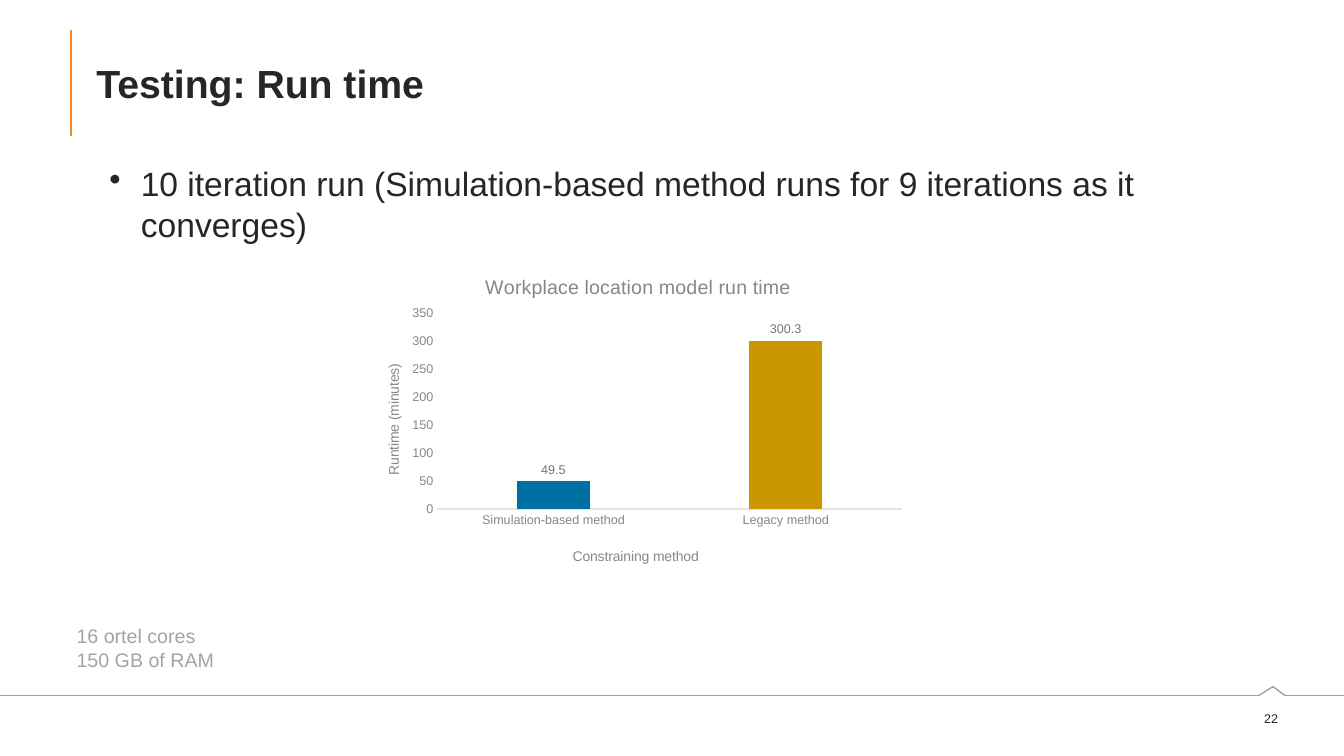
from itertools import pairwise

from lxml.etree import SubElement
from pptx import Presentation
from pptx.chart.data import CategoryChartData
from pptx.dml.color import RGBColor
from pptx.enum.chart import XL_CHART_TYPE as ChartType
from pptx.enum.chart import XL_LABEL_POSITION as LabelPosition
from pptx.enum.chart import XL_TICK_MARK as TickMark
from pptx.enum.shapes import MSO_CONNECTOR as Connector
from pptx.enum.text import MSO_ANCHOR as Anchor
from pptx.enum.text import PP_ALIGN as Align
from pptx.oxml import parse_xml
from pptx.oxml.ns import nsdecls, qn
from pptx.util import Cm, Pt

FONT = "Arial"
INK = RGBColor(0x26, 0x26, 0x26)
ORANGE = RGBColor(0xF6, 0x8B, 0x1F)
GRAY = RGBColor(0xA3, 0xA3, 0xA5)
AXIS_TEXT = RGBColor(0x87, 0x87, 0x8A)
LABEL_TEXT = RGBColor(0x75, 0x75, 0x78)
AXIS_LINE = RGBColor(0xE3, 0xE3, 0xE4)
BLUE = RGBColor(0x00, 0x6F, 0xA1)
GOLD = RGBColor(0xCA, 0x97, 0x00)


def style_font(font, size, color, bold=False):
    font.name = FONT
    font.size = Pt(size)
    font.color.rgb = color
    font.bold = bold


def add_line(slide, start, end, color, width):
    line = slide.shapes.add_connector(
        Connector.STRAIGHT, *(Cm(value) for value in (*start, *end)))
    line.line.color.rgb = color
    line.line.width = Pt(width)
    SubElement(line._element.spPr, qn("a:effectLst"))


def add_text(slide, box, lines, size, color, bold=False, anchor=Anchor.TOP):
    shape = slide.shapes.add_textbox(*(Cm(value) for value in box))
    frame = shape.text_frame
    frame.word_wrap = True
    frame.vertical_anchor = anchor
    frame.text = "\n".join(lines)
    for paragraph in frame.paragraphs:
        style_font(paragraph.font, size, color, bold)
    return frame


def add_bullet(paragraph, margin, hanging):
    properties = paragraph._p.get_or_add_pPr()
    properties.set("marL", str(Cm(margin)))
    properties.set("indent", str(-Cm(hanging)))
    bullet = parse_xml(f'<a:buChar {nsdecls("a")} char="•"/>')
    properties.insert_element_before(bullet, "a:tabLst", "a:defRPr", "a:extLst")


def make_layout(inner=False, **place):
    target = '<c:layoutTarget val="inner"/>' if inner else ""
    modes = "".join(f'<c:{key}Mode val="edge"/>' for key in "xy")
    values = "".join(f'<c:{key} val="{value}"/>' for key, value in place.items())
    return parse_xml(f'<c:layout {nsdecls("c")}><c:manualLayout>'
                     f'{target}{modes}{values}</c:manualLayout></c:layout>')


def set_layout(element, index, layout):
    for old in element.findall(qn("c:layout")):
        element.remove(old)
    element.insert(index, layout)


def set_title(owner, text, size):
    owner.has_text_frame = True
    owner.text_frame.text = text
    style_font(owner.text_frame.paragraphs[0].font, size, AXIS_TEXT)


def style_axis(axis, title):
    axis.has_major_gridlines = False
    axis.major_tick_mark = axis.minor_tick_mark = TickMark.NONE
    style_font(axis.tick_labels.font, 9, AXIS_TEXT)
    set_title(axis.axis_title, title, 10)


def add_run_time_chart(slide, box):
    data = CategoryChartData()
    data.categories = ["Simulation-based method", "Legacy method"]
    data.add_series("Series 1", [49.5, 300.3])
    chart = slide.shapes.add_chart(
        ChartType.COLUMN_CLUSTERED, *(Cm(value) for value in box), data).chart
    chart.has_legend = False
    chart.font.name = FONT
    chart.font.size = Pt(10)
    set_title(chart.chart_title, "Workplace location model run time", 14)

    style_axis(chart.category_axis, "Constraining method")
    chart.category_axis.format.line.color.rgb = AXIS_LINE
    chart.category_axis.format.line.width = Pt(0.75)
    value_axis = chart.value_axis
    style_axis(value_axis, "Runtime (minutes)")
    value_axis.format.line.fill.background()
    value_axis.minimum_scale, value_axis.maximum_scale = 0, 350
    value_axis.major_unit = 50

    plot = chart.plots[0]
    plot.vary_by_categories = False
    plot.gap_width, plot.overlap = 219, -27
    series = plot.series[0]
    for fill, color in ((series.format.fill, BLUE),
                        (series.points[1].format.fill, GOLD)):
        fill.solid()
        fill.fore_color.rgb = color
    labels = series.data_labels
    labels.show_value = True
    labels.position = LabelPosition.OUTSIDE_END
    style_font(labels.font, 9, LABEL_TEXT)

    titles = list(chart.element.iter(qn("c:title")))
    places = [(0.22, 0.05), (0.38, 0.9), (0.04, 0.33)]
    for title, (x, y) in zip(titles, places):
        set_layout(title, 1, make_layout(x=x, y=y))
    value_body = next(titles[-1].iter(qn("a:bodyPr")))
    value_body.set("rot", "-5400000")
    value_body.set("vert", "horz")
    plot_area = next(chart.element.iter(qn("c:plotArea")))
    set_layout(plot_area, 0,
               make_layout(inner=True, x=0.14, y=0.18, w=0.84, h=0.61))


def main():
    presentation = Presentation()
    presentation.slide_width = Cm(33.87)
    presentation.slide_height = Cm(19.05)
    slide = presentation.slides.add_slide(presentation.slide_layouts[6])

    add_line(slide, (1.78, 0.76), (1.78, 3.43), ORANGE, 1.5)
    footer_points = [(0, 17.53), (31.72, 17.53), (32.08, 17.3),
                     (32.39, 17.53), (33.87, 17.53)]
    for start, end in pairwise(footer_points):
        add_line(slide, start, end, GRAY, 1)
    number = add_text(slide, (31.32, 17.78, 1.42, 0.64), ["22"], 9, INK,
                      anchor=Anchor.MIDDLE)
    number.margin_right = Cm(0.53)
    number.paragraphs[0].alignment = Align.RIGHT

    add_text(slide, (2.18, 0.76, 29.97, 2.67), ["Testing: Run time"], 28, INK,
             bold=True, anchor=Anchor.MIDDLE)
    body = add_text(
        slide, (2.18, 3.99, 30.89, 12.14),
        ["10 iteration run (Simulation-based method runs for 9 iterations "
         "as it converges)"], 24, INK)
    add_bullet(body.paragraphs[0], 1.12, 0.79)
    add_run_time_chart(slide, (9.07, 6.43, 13.94, 8.1))
    add_text(slide, (1.68, 15.6, 6.27, 1.45),
             ["16 ortel cores", "150 GB of RAM"], 14, GRAY)

    presentation.save("out.pptx")


if __name__ == "__main__":
    main()
